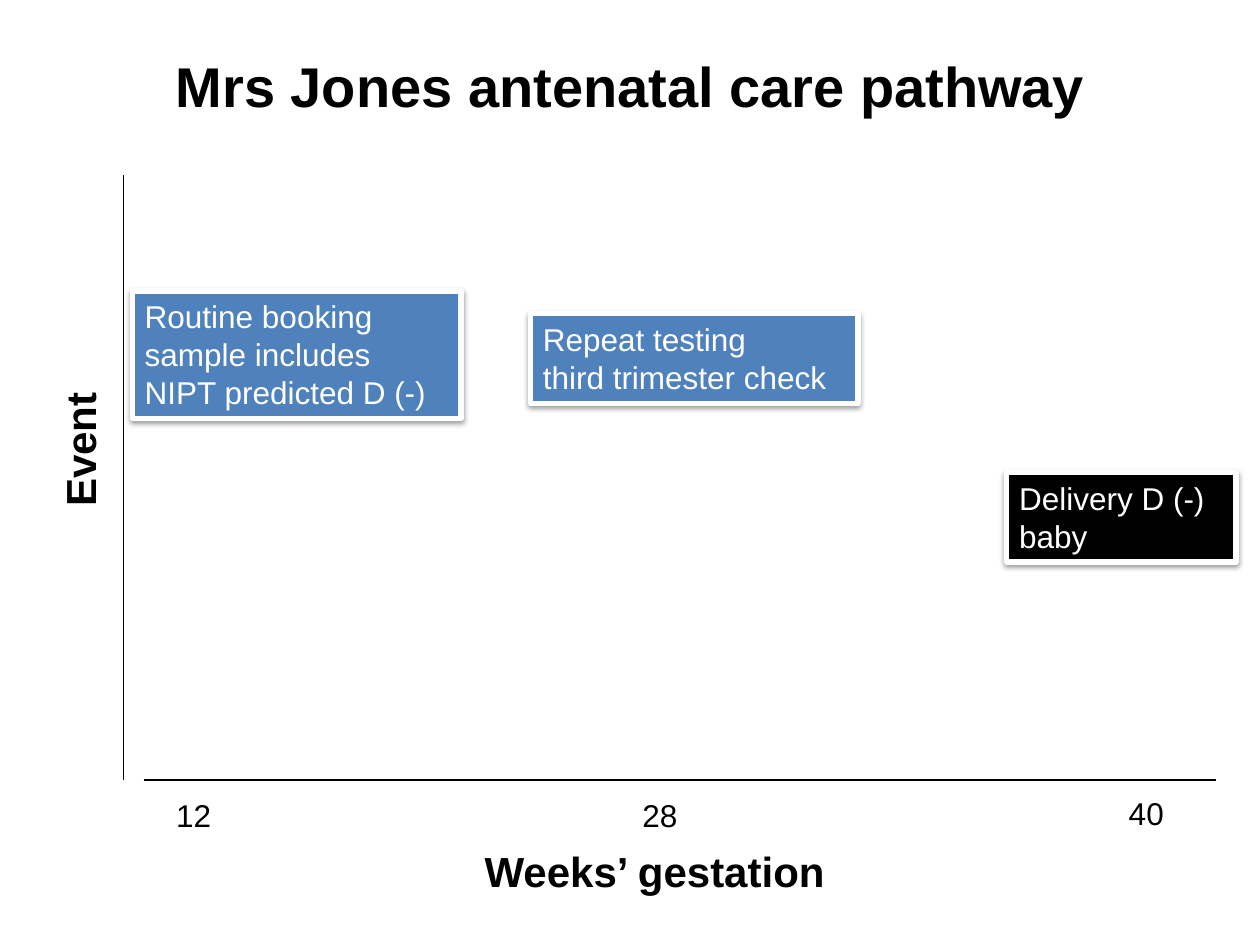
from lxml.etree import SubElement
from pptx import Presentation
from pptx.dml.color import RGBColor
from pptx.enum.shapes import MSO_CONNECTOR, MSO_SHAPE
from pptx.enum.text import MSO_ANCHOR, MSO_AUTO_SIZE, PP_ALIGN
from pptx.oxml.ns import qn
from pptx.util import Inches, Pt

BLACK = RGBColor(0x00, 0x00, 0x00)
WHITE = RGBColor(0xFF, 0xFF, 0xFF)
BLUE = RGBColor(0x4F, 0x81, 0xBD)

TITLE_ONLY_LAYOUT = 5
COLUMNS, ROWS = 100, 75
AXIS_ROW = 61.9


def write_text(shape, text, size=18, bold=False, color=BLACK, align=PP_ALIGN.LEFT,
               font_name="Arial", auto_size=MSO_AUTO_SIZE.SHAPE_TO_FIT_TEXT):
    """Fill a shape with text, one paragraph per line."""
    frame = shape.text_frame
    frame.text = text
    frame.word_wrap = True
    frame.auto_size = auto_size
    frame.vertical_anchor = MSO_ANCHOR.TOP
    for paragraph in frame.paragraphs:
        paragraph.alignment = align
        font = paragraph.font
        for target in [font] + [run.font for run in paragraph.runs]:
            target.name = font_name
            target.size = Pt(size)
            target.bold = bold
            target.color.rgb = color


def add_soft_shadow(shape):
    shape.shadow.inherit = False
    effects = shape.element.spPr.find(qn("a:effectLst"))
    shadow = SubElement(effects, qn("a:outerShdw"), blurRad=str(Pt(3.1)),
                        dist=str(Pt(1.6)), dir="5400000", rotWithShape="0")
    color = SubElement(shadow, qn("a:srgbClr"), val=str(BLACK))
    SubElement(color, qn("a:alpha"), val="38000")


class PathwaySlide:
    """Places elements on a grid of COLUMNS by ROWS."""

    def __init__(self, presentation):
        self.column = presentation.slide_width / COLUMNS
        self.row = presentation.slide_height / ROWS
        layout = presentation.slide_layouts[TITLE_ONLY_LAYOUT]
        self.slide = presentation.slides.add_slide(layout)

    def place(self, left, top, width, height):
        return (round(left * self.column), round(top * self.row),
                round(width * self.column), round(height * self.row))

    def title(self, text, *cells):
        title = self.slide.shapes.title
        title.left, title.top, title.width, title.height = self.place(*cells)
        write_text(title, text, size=32, bold=True, align=PP_ALIGN.CENTER)

    def axis(self, *cells):
        """Draw a line between two grid points."""
        line = self.slide.shapes.add_connector(MSO_CONNECTOR.STRAIGHT, *self.place(*cells))
        line.line.color.rgb = BLACK
        line.line.width = Pt(0.75)
        SubElement(line.element.spPr, qn("a:effectLst"))

    def label(self, text, *cells, rotation=0, **text_format):
        box = self.slide.shapes.add_textbox(*self.place(*cells))
        box.rotation = rotation
        write_text(box, text, **text_format)

    def event(self, text, *cells, fill=BLUE):
        box = self.slide.shapes.add_shape(MSO_SHAPE.RECTANGLE, *self.place(*cells))
        box.fill.solid()
        box.fill.fore_color.rgb = fill
        box.line.color.rgb = WHITE
        box.line.width = Pt(3)
        add_soft_shadow(box)
        write_text(box, text, color=WHITE)


def main():
    presentation = Presentation()
    presentation.slide_width = Inches(10)
    presentation.slide_height = Inches(7.5)

    pathway = PathwaySlide(presentation)
    pathway.title("Mrs Jones antenatal care pathway", 8.3, 3.6, 83.5, 6.4)

    pathway.axis(11.4, AXIS_ROW, 96.5, AXIS_ROW)
    pathway.axis(9.8, AXIS_ROW, 9.8, 13.9)
    pathway.label("Event", 0.4, 32.8, 11.8, 5, rotation=270, size=24, bold=True)
    pathway.label("Weeks’ gestation", 37.4, 66.6, 29.1, 5,
                  size=24, bold=True, align=PP_ALIGN.CENTER)
    for week, left, top in (("12", 13, 62.7), ("28", 50, 62.7), ("40", 88.6, 62.5)):
        pathway.label(week, left, top, 7.9, 4.1)

    pathway.event("Routine booking sample includes NIPT predicted D (-)",
                  10.5, 23.1, 26.1, 10.1)
    pathway.event("Repeat testing\nthird trimester check", 42.1, 24.9, 26, 7.1)
    pathway.event("Delivery D (-) baby", 79.9, 37.5, 18.2, 7.1, fill=BLACK)

    presentation.save("out.pptx")


if __name__ == "__main__":
    main()
